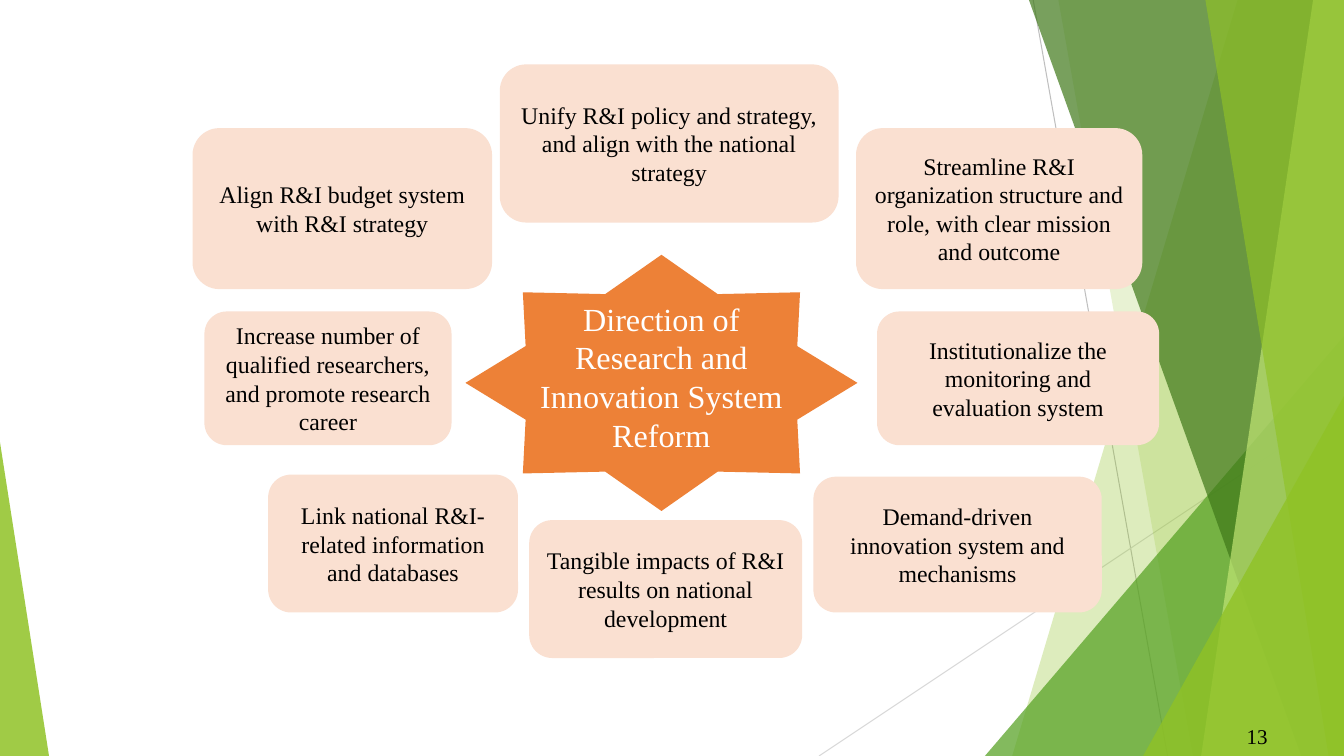
from dataclasses import dataclass

from lxml.etree import SubElement
from pptx import Presentation
from pptx.dml.color import RGBColor
from pptx.enum.shapes import MSO_CONNECTOR, MSO_SHAPE as Preset
from pptx.enum.text import MSO_ANCHOR as Anchor, PP_ALIGN as Align
from pptx.oxml.ns import qn
from pptx.util import Pt


@dataclass(frozen=True)
class Theme:
    font: str = "Times New Roman"
    ink: str = "000000"
    paper: str = "FFFFFF"
    star: str = "ED8137"
    card: str = "FAE0D1"
    lime: str = "90C226"
    pale_lime: str = "C0E474"
    leaf: str = "54A021"
    forest: str = "3F7819"
    rules: tuple = ("BFBFBF", "D9D9D9")
    star_size: int = 23
    card_size: int = 17
    number_size: int = 15


THEME = Theme()
WIDTH, HEIGHT = 960, 540

STAR_TEXT = "Direction of Research and Innovation System Reform"
STAR_BOX = (195, 136, 280, 183)

# Each direction: left, top, width and height inside the ring
DIRECTIONS = {
    "Align R&I budget system with R&I strategy": (0, 45.5, 214, 115),
    "Increase number of qualified researchers, and promote research career":
        (8.5, 176.5, 176.5, 95.5),
    "Streamline R&I organization structure and role, with clear mission and outcome":
        (474, 45.5, 204.5, 115),
    "Tangible impacts of R&I results on national development":
        (240.5, 325.5, 195, 98.5),
    "Institutionalize the monitoring and evaluation system":
        (489, 176.5, 201.5, 95.5),
    "Demand-driven innovation system and mechanisms": (443.5, 294.5, 206, 97),
    "Unify R&I policy and strategy, and align with the national strategy":
        (219.5, 0, 242, 113),
    "Link national R&I-related information and databases": (54, 293, 178.5, 98.5),
}


def points(*lengths):
    return [Pt(length) for length in lengths]


def apply(target, values):
    for name, value in values.items():
        setattr(target, name, value)


def paint(shape, color, opacity=100):
    """Give the shape a flat fill, without outline or shadow."""
    shape.shadow.inherit = False
    shape.line.fill.background()
    shape.fill.solid()
    shape.fill.fore_color.rgb = RGBColor.from_string(color)
    if opacity < 100:
        tint = shape.fill._xPr.find(f"{qn('a:solidFill')}/{qn('a:srgbClr')}")
        SubElement(tint, qn("a:alpha"), val=str(opacity * 1000))


def write(shape, text, size, color, align=Align.CENTER, anchor=Anchor.MIDDLE):
    frame = shape.text_frame
    apply(frame, {"word_wrap": True, "vertical_anchor": anchor})
    paragraph = frame.paragraphs[0]
    paragraph.alignment = align
    run = paragraph.add_run()
    run.text = text
    apply(run.font, {"name": THEME.font, "size": Pt(size)})
    run.font.color.rgb = RGBColor.from_string(color)


def add_wedge(slide, box, apex, color, opacity):
    """Add a right triangle whose apex is at the left (0) or the right (1)."""
    wedge = slide.shapes.add_shape(Preset.ISOSCELES_TRIANGLE, *points(*box))
    wedge.adjustments[0] = apex
    paint(wedge, color, opacity)


def add_facets(slide, box):
    """Layer translucent facets against the right side of the box."""
    left, top, width, height = box
    right, bottom = left + width, top + height

    def add_rule(start_x, start_y, end_x, end_y, color):
        rule = slide.shapes.add_connector(
            MSO_CONNECTOR.STRAIGHT,
            *points(left + start_x, top + start_y, left + end_x, top + end_y))
        rule.line.color.rgb = RGBColor.from_string(color)
        rule.line.width = Pt(0.75)
        SubElement(rule._element.spPr, qn("a:effectLst"))

    def add_band(top_x, bottom_x, color, opacity):
        outline = slide.shapes.build_freeform(*points(left + top_x, top))
        corners = [(right, top), (right, bottom), (left + bottom_x, bottom)]
        outline.add_line_segments([points(*corner) for corner in corners])
        paint(outline.convert_to_shape(), color, opacity)

    def add_corner(inset_x, inset_y, color, opacity):
        corner = (left + inset_x, top + inset_y, width - inset_x, height - inset_y)
        add_wedge(slide, corner, 1, color, opacity)

    add_rule(153, 0, 249, height, THEME.rules[0])
    add_rule(width, 290, 0, height, THEME.rules[1])
    add_band(299, 138, THEME.lime, 30)
    add_band(171, 267, THEME.lime, 20)
    add_corner(118.5, 240, THEME.leaf, 72)
    add_band(150, 344.5, THEME.forest, 70)
    add_band(353, 273, THEME.pale_lime, 70)
    add_band(276, 364, THEME.lime, 65)
    add_corner(231.5, 283, THEME.lime, 80)


def add_reform_ring(slide, box):
    """Place the star and the directions around it inside the box."""
    ring_left, ring_top = box[:2]

    def add_part(preset, part_box, color):
        left, top, width, height = part_box
        part = slide.shapes.add_shape(
            preset, *points(ring_left + left, ring_top + top, width, height))
        paint(part, color)
        return part

    star = add_part(Preset.STAR_8_POINT, STAR_BOX, THEME.star)
    write(star, STAR_TEXT, THEME.star_size, THEME.paper, anchor=Anchor.TOP)
    for direction, card_box in DIRECTIONS.items():
        card = add_part(Preset.ROUNDED_RECTANGLE, card_box, THEME.card)
        write(card, direction, THEME.card_size, THEME.ink)


def add_page_number(slide, box, number):
    page_number = slide.shapes.add_textbox(*points(*box))
    write(page_number, number, THEME.number_size, THEME.ink, Align.RIGHT)


def main():
    deck = Presentation()
    apply(deck, {"slide_width": Pt(WIDTH), "slide_height": Pt(HEIGHT)})
    slide = deck.slides.add_slide(deck.slide_layouts[6])
    add_facets(slide, (585, 0, WIDTH - 585, HEIGHT))
    add_wedge(slide, (0, 316, 35, HEIGHT - 316), 0, THEME.lime, 85)
    add_reform_ring(slide, (137.5, 46, 690.5, 424))
    add_page_number(slide, (718, 511, 194.5, 29), "13")
    deck.save("out.pptx")


if __name__ == "__main__":
    main()
